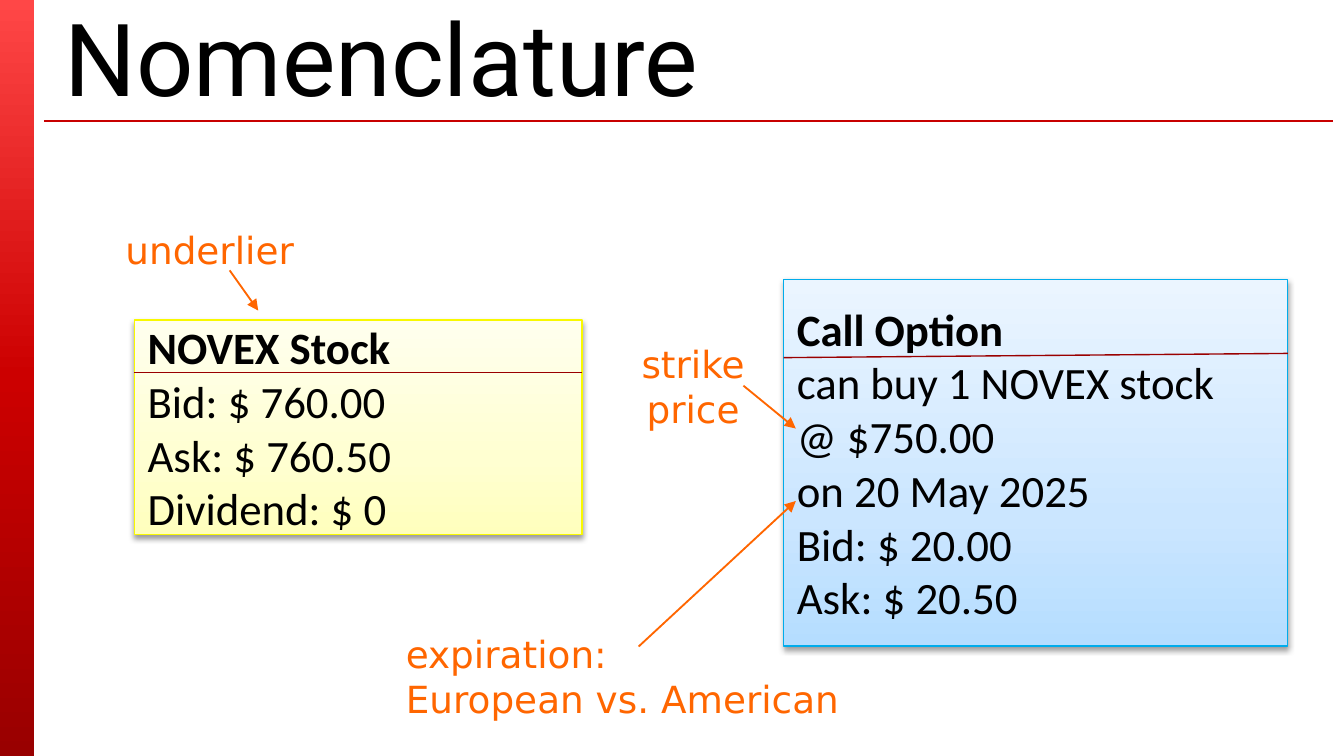
from dataclasses import dataclass

from lxml.etree import SubElement
from pptx import Presentation
from pptx.dml.color import RGBColor
from pptx.enum.shapes import MSO_CONNECTOR as Connector, MSO_SHAPE as Shape
from pptx.enum.text import MSO_ANCHOR as Anchor, MSO_AUTO_SIZE as AutoSize, PP_ALIGN as Align
from pptx.oxml.ns import qn
from pptx.util import Cm, Pt

WIDTH, HEIGHT = 25.4, 14.29
BLACK, ORANGE, DARK_RED = "000000", "FF6600", "9A0000"
TITLE_FORMAT = {"name": "Roboto", "size": Pt(54), "bold": False}
HEADING_FORMAT = {"name": "Calibri", "size": Pt(24), "bold": True}
BODY_FORMAT = HEADING_FORMAT | {"bold": False}
NOTE_FORMAT = {"name": "DejaVu Sans", "size": Pt(20), "bold": False}


@dataclass
class Area:
    left: float
    top: float
    width: float
    height: float

    def lengths(self) -> list:
        return [Cm(value) for value in (self.left, self.top, self.width, self.height)]


@dataclass
class Card:
    area: Area
    stops: dict
    border: str
    heading: str
    body: list
    rule: tuple


@dataclass
class Note:
    area: Area
    text: str
    align: Align
    wrap: bool
    arrow: tuple


def colour(value: str) -> RGBColor:
    return RGBColor.from_string(value)


def add_line(page, ends: tuple, tint: str, weight: float, arrow: bool = False) -> None:
    line = page.shapes.add_connector(Connector.STRAIGHT, *[Cm(value) for value in ends])
    line.line.color.rgb = colour(tint)
    line.line.width = Pt(weight)
    properties = line._element.spPr
    if arrow:
        SubElement(properties.find(qn("a:ln")), qn("a:tailEnd"), type="triangle")
    SubElement(properties, qn("a:effectLst"))


def add_gradient_box(page, area: Area, stops: dict, angle: int):
    box = page.shapes.add_shape(Shape.RECTANGLE, *area.lengths())
    box.shadow.inherit = False
    box.line.fill.background()
    box.fill.gradient()
    box.fill.gradient_angle = angle
    stop_list = box._element.spPr.find(qn("a:gradFill")).find(qn("a:gsLst"))
    for stop in list(stop_list):
        stop_list.remove(stop)
    for position, tint in stops.items():
        stop = SubElement(stop_list, qn("a:gs"), pos=str(position * 1000))
        SubElement(stop, qn("a:srgbClr"), val=tint)
    return box


def add_shadow(box) -> None:
    effects = box._element.spPr.find(qn("a:effectLst"))
    shadow = SubElement(effects, qn("a:outerShdw"), blurRad=str(Pt(3.1)), dist=str(Pt(1.6)),
                        dir="5400000", rotWithShape="0")
    tint = SubElement(shadow, qn("a:srgbClr"), val=BLACK)
    SubElement(tint, qn("a:alpha"), val="38000")


def write_para(para, text: str, tint: str, formats: dict, align: Align = Align.LEFT) -> None:
    para.text = text
    para.alignment = align
    for span in para.runs:
        for name, value in formats.items():
            setattr(span.font, name, value)
        span.font.color.rgb = colour(tint)


def add_text(page, area: Area, text: str, tint: str, formats: dict,
             align: Align = Align.LEFT, wrap: bool = True):
    frame = page.shapes.add_textbox(*area.lengths()).text_frame
    frame.word_wrap = wrap
    write_para(frame.paragraphs[0], text, tint, formats, align)
    return frame


def add_card(page, card: Card) -> None:
    box = add_gradient_box(page, card.area, card.stops, 90)
    add_shadow(box)
    box.line.color.rgb = colour(card.border)
    box.line.width = Pt(0.75)
    frame = box.text_frame
    frame.word_wrap = True
    frame.vertical_anchor = Anchor.MIDDLE
    write_para(frame.paragraphs[0], card.heading, BLACK, HEADING_FORMAT)
    for text in card.body:
        write_para(frame.add_paragraph(), text, BLACK, BODY_FORMAT)
    add_line(page, card.rule, DARK_RED, 0.75)


def add_note(page, note: Note) -> None:
    frame = add_text(page, note.area, note.text, ORANGE, NOTE_FORMAT, note.align, note.wrap)
    frame.auto_size = AutoSize.SHAPE_TO_FIT_TEXT
    add_line(page, note.arrow, ORANGE, 1, arrow=True)


CARDS = [
    Card(Area(2.54, 6.05, 8.46, 4.06), {0: "FFFFBD", 35: "FFFFD1", 100: "FFFFEE"}, "F9F900",
         "NOVEX Stock", ["Bid: $ 760.00\nAsk: $ 760.50", "Dividend: $ 0"],
         (2.54, 7.04, 11, 7.04)),
    Card(Area(14.81, 5.28, 9.53, 6.93), {0: "B5DDFF", 35: "CBE6FF", 100: "EBF5FF"}, "00ACEB",
         "Call Option",
         ["can buy 1 NOVEX stock\n@ $750.00", "on 20 May 2025", "Bid: $ 20.00", "Ask: $ 20.50"],
         (14.81, 6.76, 24.34, 6.68)),
]
NOTES = [
    Note(Area(2.11, 4.17, 3.71, 1.12), "underlier", Align.CENTER, False,
         (4.34, 5.11, 4.88, 5.87)),
    Note(Area(11.73, 6.32, 2.74, 1.96), "strike price", Align.CENTER, True,
         (14.05, 7.29, 15.04, 8.1)),
    Note(Area(7.42, 11.81, 8.71, 1.96), "expiration:\nEuropean vs. American", Align.LEFT, False,
         (12.07, 12.22, 15.04, 9.47)),
]


def main() -> None:
    deck = Presentation()
    deck.slide_width, deck.slide_height = Cm(WIDTH), Cm(HEIGHT)
    page = deck.slides.add_slide(deck.slide_layouts[6])
    add_gradient_box(page, Area(0, 0, 0.64, HEIGHT),
                     {0: "FF4747", 50: "CC0000", 100: "990000"}, 270)
    add_line(page, (0.84, 2.29, 25.2, 2.29), "C80000", 0.75)
    title = add_text(page, Area(0.97, 0.38, 24.33, 1.35), "Nomenclature", BLACK, TITLE_FORMAT)
    title.vertical_anchor = Anchor.MIDDLE
    for card in CARDS:
        add_card(page, card)
    for note in NOTES:
        add_note(page, note)
    deck.save("out.pptx")


if __name__ == "__main__":
    main()
